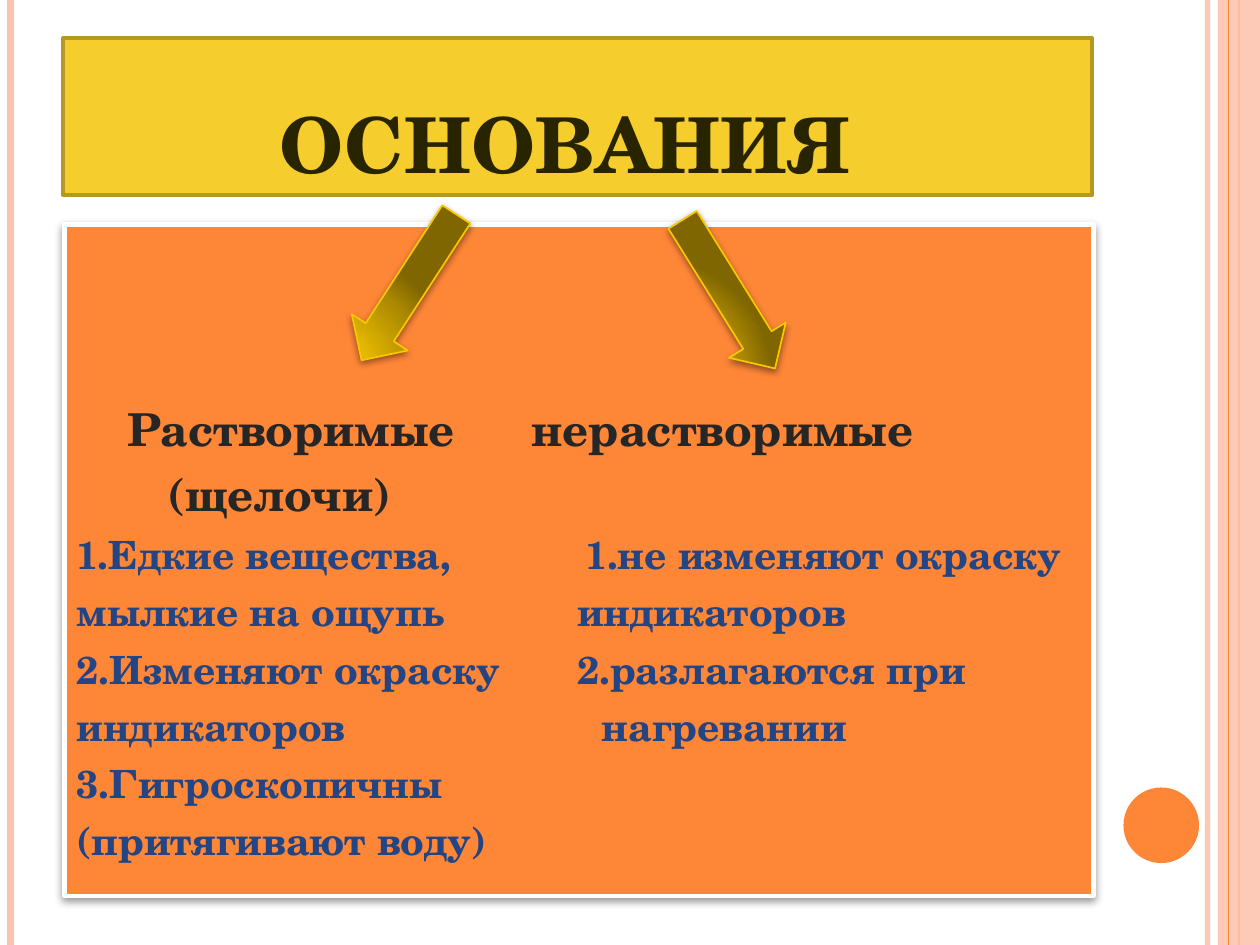
from lxml.etree import SubElement
from pptx import Presentation
from pptx.dml.color import RGBColor
from pptx.enum.shapes import MSO_CONNECTOR as Connector, MSO_SHAPE as Shape
from pptx.enum.text import MSO_ANCHOR as Anchor, PP_ALIGN as Align
from pptx.oxml import parse_xml
from pptx.oxml.ns import nsdecls, qn
from pptx.util import Pt

FONT = "TeX Gyre Schola"
ORANGE = RGBColor(0xFE, 0x86, 0x37)
PINK = RGBColor(0xFE, 0xC3, 0xAE)
YELLOW = RGBColor(0xF5, 0xCD, 0x2D)
OCHRE = RGBColor(0xB5, 0x98, 0x21)
GOLD = RGBColor(0xF8, 0xC7, 0x00)
WHITE = RGBColor(0xFF, 0xFF, 0xFF)
DARK_OLIVE = RGBColor(0x29, 0x24, 0x00)
CHARCOAL = RGBColor(0x26, 0x26, 0x26)
NAVY = RGBColor(0x24, 0x45, 0x83)
BLACK = RGBColor(0, 0, 0)
ARROW_STOPS = [
    (0, RGBColor(0xED, 0xBE, 0x00)),
    (30, RGBColor(0xE5, 0xB7, 0x00)),
    (75, RGBColor(0xAC, 0x89, 0x00)),
    (100, RGBColor(0x7F, 0x66, 0x00)),
]

HEADINGS = [
    ("\tРастворимые\tнерастворимые", (29, 260)),
    ("\t(щелочи)", (52,)),
]
PROPERTIES = [
    ("1.Едкие вещества,\t1.не изменяют окраску", (291,)),
    ("мылкие на ощупь\tиндикаторов", (286,)),
    ("2.Изменяют окраску\t2.разлагаются при", (286,)),
    ("индикаторов\tнагревании", (300,)),
    ("3.Гигроскопичны", ()),
    ("(притягивают воду)", ()),
]


def set_alpha(holder, percent):
    """Make the solid colour inside an element partly transparent."""
    colour = next(holder.iter(qn("a:srgbClr")))
    SubElement(colour, qn("a:alpha"), val=str(percent * 1000))


def add_stripe(page, x, colour, weight, alpha=100):
    """Draw a full-height vertical line."""
    stripe = page.shapes.add_connector(Connector.STRAIGHT, Pt(x), Pt(0), Pt(x), Pt(540))
    stripe.line.color.rgb = colour
    stripe.line.width = Pt(weight)
    properties = stripe._element.spPr
    if alpha < 100:
        set_alpha(properties, alpha)
    SubElement(properties, qn("a:effectLst"))


def add_box(page, kind, place, colour=None, outline=None, weight=1):
    """Add a flat preset shape."""
    box = page.shapes.add_shape(kind, *map(Pt, place))
    box.shadow.inherit = False
    if colour is not None:
        box.fill.solid()
        box.fill.fore_color.rgb = colour
    if outline is None:
        box.line.fill.background()
    else:
        box.line.color.rgb = outline
        box.line.width = Pt(weight)
    return box


def add_shadow(box, alpha, distance):
    """Give a shape a soft shadow below it."""
    effects = box._element.spPr.find(qn("a:effectLst"))
    shadow = SubElement(
        effects, qn("a:outerShdw"), blurRad=str(Pt(4)), dist=str(Pt(distance)),
        dir="5400000", rotWithShape="0",
    )
    SubElement(shadow, qn("a:srgbClr"), val=str(BLACK))
    set_alpha(shadow, alpha)


def add_arrow(page, place, rotation):
    """Add a rotated block arrow with a radial gold gradient."""
    arrow = add_box(page, Shape.DOWN_ARROW, place, outline=GOLD)
    arrow.rotation = rotation
    stops = "".join(
        f'<a:gs pos="{position * 1000}"><a:srgbClr val="{colour}"/></a:gs>'
        for position, colour in ARROW_STOPS
    )
    gradient = parse_xml(
        f'<a:gradFill {nsdecls("a")} rotWithShape="1"><a:gsLst>{stops}</a:gsLst>'
        '<a:path path="circle"><a:fillToRect l="5000" t="100000" r="120000" b="10000"/>'
        "</a:path></a:gradFill>"
    )
    arrow._element.spPr.find(qn("a:prstGeom")).addnext(gradient)
    add_shadow(arrow, 42, 1.6)


def style_font(para, size, colour):
    """Set the bold slide font on a paragraph."""
    para.font.name = FONT
    para.font.size = Pt(size)
    para.font.bold = True
    para.font.color.rgb = colour


def set_title(page, text):
    """Place and format the title placeholder."""
    title = page.shapes.title
    title.left, title.top, title.width, title.height = map(Pt, (36, 21.6, 588, 90))
    title.fill.solid()
    title.fill.fore_color.rgb = YELLOW
    title.line.color.rgb = OCHRE
    title.line.width = Pt(2)
    frame = title.text_frame
    frame.text = text
    frame.vertical_anchor = Anchor.BOTTOM
    frame.margin_right = Pt(21)
    para = frame.paragraphs[0]
    para.alignment = Align.CENTER
    style_font(para, 44, DARK_OLIVE)


def add_line(para, text, stops, size, colour):
    """Fill a paragraph whose columns start at tab stops."""
    para.text = text
    para.alignment = Align.LEFT
    style_font(para, size, colour)
    if stops:
        properties = para._p.get_or_add_pPr()
        tabs = parse_xml(f'<a:tabLst {nsdecls("a")}/>')
        for stop in stops:
            SubElement(tabs, qn("a:tab"), pos=str(Pt(stop)), algn="l")
        properties.find(qn("a:defRPr")).addprevious(tabs)


def add_panel(page):
    """Add the panel that compares the two groups of bases."""
    panel = add_box(page, Shape.RECTANGLE, (36.7, 128.2, 588, 383.8), ORANGE, WHITE, 2.75)
    add_shadow(panel, 40, 2)
    frame = panel.text_frame
    frame.word_wrap = True
    frame.vertical_anchor = Anchor.TOP
    frame.margin_top = Pt(101)
    lines = [(*line, 25.9, CHARCOAL) for line in HEADINGS]
    lines += [(*line, 22.2, NAVY) for line in PROPERTIES]
    for index, line in enumerate(lines):
        para = frame.add_paragraph() if index else frame.paragraphs[0]
        para.space_before = Pt(6 if index else 0)
        add_line(para, *line)


def main():
    """Build the slide and save the deck."""
    deck = Presentation()
    deck.slide_width, deck.slide_height = Pt(720), Pt(540)
    page = deck.slides.add_slide(deck.slide_layouts[5])
    add_stripe(page, 690, PINK, 3, 93)
    add_stripe(page, 6, PINK, 4.5)
    add_stripe(page, 708, ORANGE, 1.5)
    band = add_box(page, Shape.RECTANGLE, (696, 0, 24, 540), PINK)
    set_alpha(band._element.spPr, 87)
    add_stripe(page, 702, ORANGE, 0.75)
    add_box(page, Shape.OVAL, (642, 450, 43.2, 43.2), ORANGE)
    set_title(page, "ОСНОВАНИЯ")
    add_panel(page)
    add_arrow(page, (214.6, 114.5, 38.2, 99.4), 33)
    add_arrow(page, (397.4, 118.1, 38.2, 100), 328.1)
    deck.save("out.pptx")


if __name__ == "__main__":
    main()
